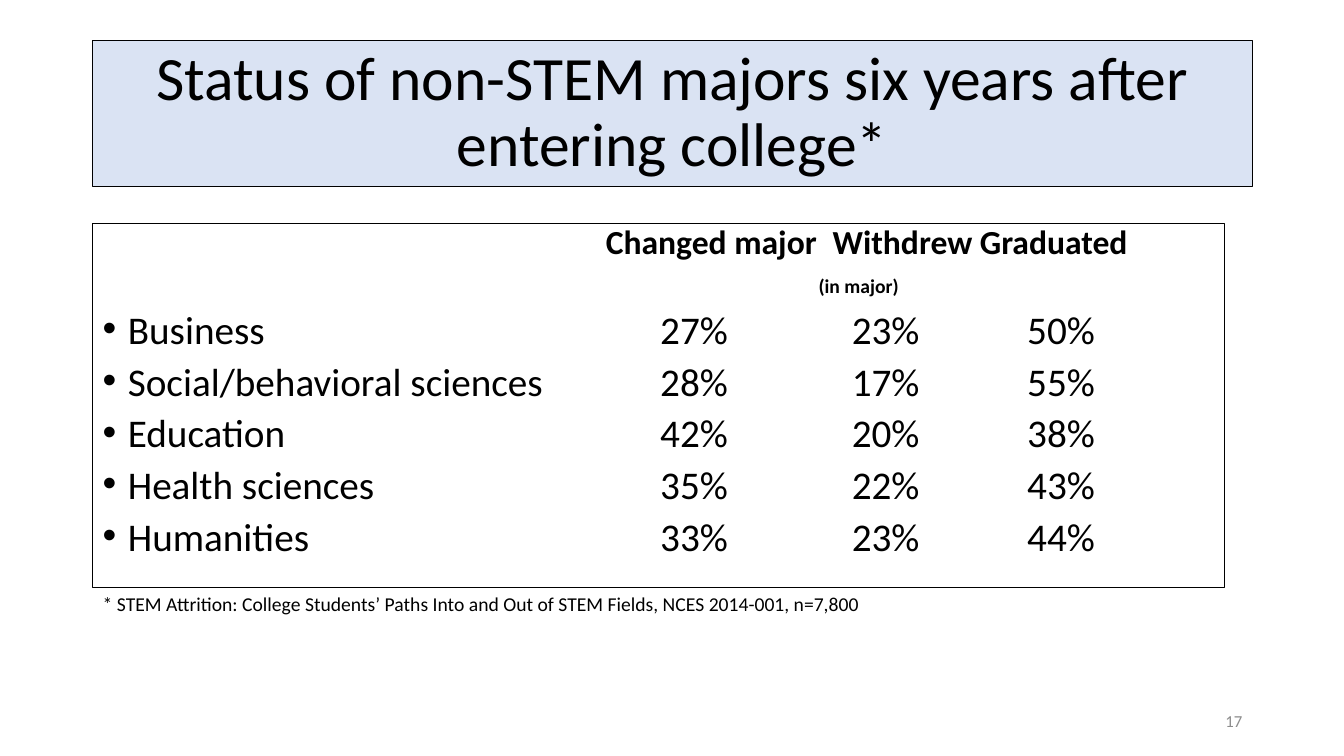
from lxml import etree
from pptx import Presentation
from pptx.dml.color import RGBColor
from pptx.enum.shapes import MSO_SHAPE
from pptx.enum.text import MSO_ANCHOR, PP_ALIGN
from pptx.oxml.ns import qn
from pptx.util import Inches, Pt

RECTANGLE = MSO_SHAPE.RECTANGLE
TOP, MIDDLE = MSO_ANCHOR.TOP, MSO_ANCHOR.MIDDLE
LEFT, CENTER, RIGHT = PP_ALIGN.LEFT, PP_ALIGN.CENTER, PP_ALIGN.RIGHT

BLACK = RGBColor(0x00, 0x00, 0x00)
GREY = RGBColor(0x8C, 0x8C, 0x8C)
PALE_BLUE = RGBColor(0xDA, 0xE3, 0xF3)
FONT = "Calibri"

BULLET_INDENT = 0.25
HEADING_TABS = (4.99, 7.24, 8.7)
NOTE_TABS = (7.1,)
VALUE_TABS = (5.53, 7.43, 9.17)

HEADINGS = ("Changed major", "Withdrew", "Graduated")
OUTCOMES = (
    ("Business", "27%", "23%", "50%"),
    ("Social/behavioral sciences", "28%", "17%", "55%"),
    ("Education", "42%", "20%", "38%"),
    ("Health sciences", "35%", "22%", "43%"),
    ("Humanities", "33%", "23%", "44%"),
)


def style(font, size, color=BLACK, bold=False):
    font.name = FONT
    font.size = Pt(size)
    font.color.rgb = color
    font.bold = bold


def add_panel(slide, left, top, width, height, anchor, fill=None):
    panel = slide.shapes.add_shape(
        RECTANGLE, Inches(left), Inches(top), Inches(width), Inches(height))
    panel.shadow.inherit = False
    if fill is None:
        panel.fill.background()
    else:
        panel.fill.solid()
        panel.fill.fore_color.rgb = fill
    panel.line.color.rgb = BLACK
    panel.line.width = Pt(0.75)
    panel.text_frame.word_wrap = True
    panel.text_frame.vertical_anchor = anchor
    return panel.text_frame


def add_label(slide, text, left, top, width, height, size,
              color=BLACK, align=LEFT, anchor=TOP, wrap=True):
    label = slide.shapes.add_textbox(
        Inches(left), Inches(top), Inches(width), Inches(height)).text_frame
    label.word_wrap = wrap
    label.vertical_anchor = anchor
    label.text = text
    label.paragraphs[0].alignment = align
    style(label.paragraphs[0].runs[0].font, size, color)


def set_layout(paragraph, tabs, space_before=0, bullet=False):
    """Set spacing, the optional bullet and the column tab stops."""
    paragraph.alignment = LEFT
    paragraph.line_spacing = 0.8
    paragraph.space_before = Pt(space_before)
    properties = paragraph._p.get_or_add_pPr()
    if bullet:
        properties.set("marL", str(Inches(BULLET_INDENT)))
        properties.set("indent", str(-Inches(BULLET_INDENT)))
        etree.SubElement(properties, qn("a:buFont"), typeface="Arial")
        etree.SubElement(properties, qn("a:buChar"), char="•")
    tab_list = etree.SubElement(properties, qn("a:tabLst"))
    for position in tabs:
        etree.SubElement(tab_list, qn("a:tab"), pos=str(Inches(position)), algn="l")


def add_outcomes(frame):
    # Column headings
    headings = frame.paragraphs[0]
    headings.text = "\t" + "\t".join(HEADINGS)
    set_layout(headings, HEADING_TABS)
    style(headings.runs[0].font, 24, bold=True)

    # Note under the headings
    note = frame.add_paragraph()
    set_layout(note, NOTE_TABS, space_before=5)
    for text, size in (("\t", 24), ("(in major)", 14)):
        run = note.add_run()
        run.text = text
        style(run.font, size, bold=True)

    # One line per field of study
    for outcome in OUTCOMES:
        field = frame.add_paragraph()
        field.text = "\t".join(outcome)
        set_layout(field, VALUE_TABS, space_before=10, bullet=True)
        style(field.runs[0].font, 28)


def main():
    presentation = Presentation()
    presentation.slide_width = Inches(13.33)
    presentation.slide_height = Inches(7.5)
    slide = presentation.slides.add_slide(presentation.slide_layouts[6])

    # Title
    title = add_panel(slide, 0.92, 0.4, 11.5, 1.45, MIDDLE, PALE_BLUE)
    title.text = "Status of non-STEM majors six years after entering college*"
    title.paragraphs[0].alignment = CENTER
    title.paragraphs[0].line_spacing = 0.9
    style(title.paragraphs[0].runs[0].font, 44)

    # Outcomes by field
    add_outcomes(add_panel(slide, 0.92, 2.22, 11.23, 3.61, TOP))

    # Source and page number
    add_label(slide, "* STEM Attrition: College Students’ Paths Into and Out of "
              "STEM Fields, NCES 2014-001, n=7,800",
              0.92, 5.82, 7.78, 0.81, 14, wrap=False)
    add_label(slide, "17", 9.42, 6.95, 3, 0.4, 12, GREY, RIGHT, MIDDLE)

    presentation.save("out.pptx")


if __name__ == "__main__":
    main()
